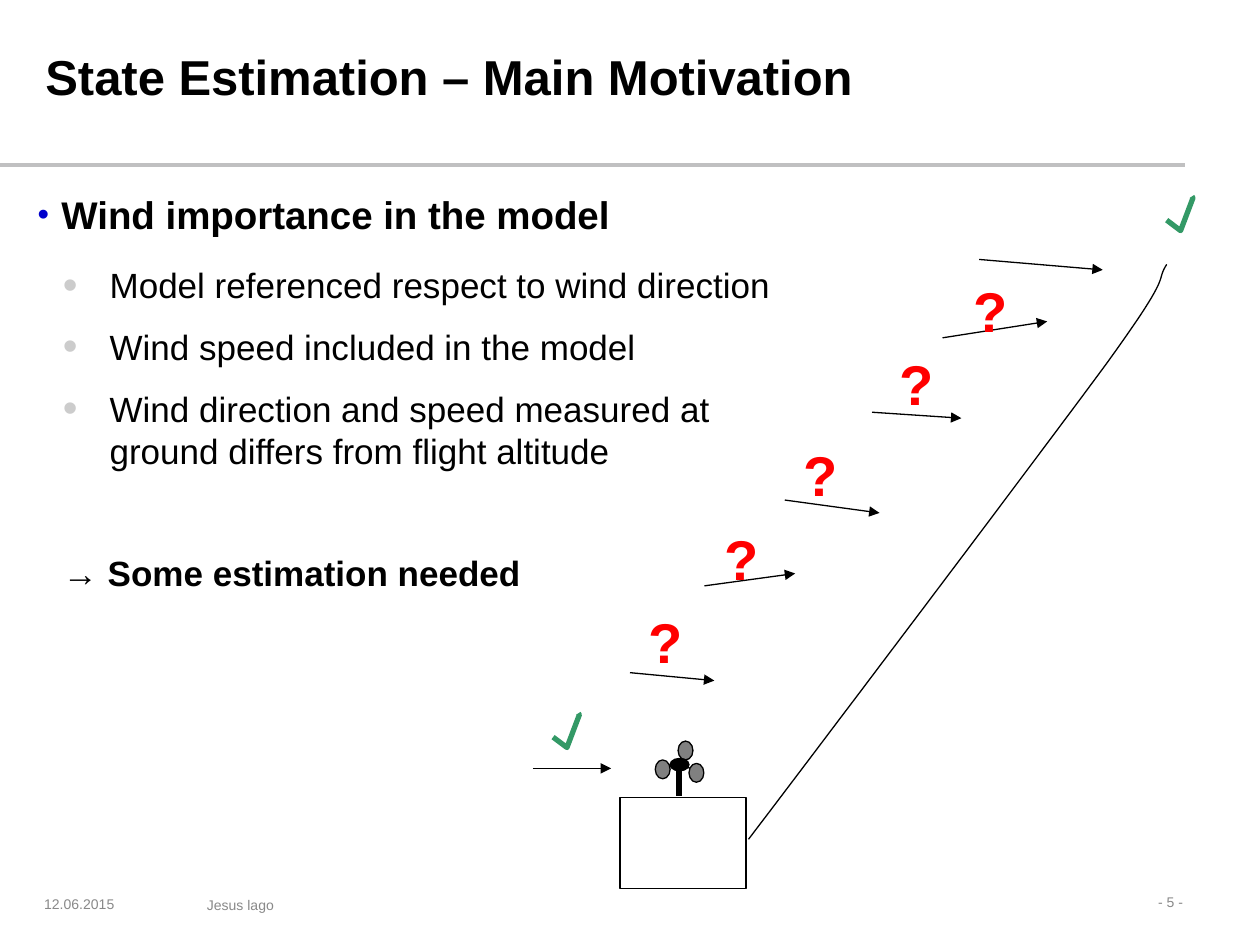
"""Build the slide on the motivation for estimating the wind state."""
from lxml.etree import SubElement
from pptx import Presentation
from pptx.dml.color import RGBColor
from pptx.enum.shapes import MSO_CONNECTOR, MSO_SHAPE
from pptx.enum.text import MSO_ANCHOR, MSO_AUTO_SIZE, PP_ALIGN
from pptx.oxml.ns import qn
from pptx.util import Cm, Pt


def outline(shape, color="000000", width=0.75):
    shape.line.color.rgb = RGBColor.from_string(color)
    shape.line.width = Pt(width)
    SubElement(shape._element.spPr, qn("a:effectLst"))


def format_text(paragraph, size, color="000000", bold=False, align=PP_ALIGN.LEFT):
    paragraph.alignment = align
    for run in paragraph.runs:
        run.font.name = "Arial"
        run.font.size = Pt(size)
        run.font.bold = bold
        run.font.color.rgb = RGBColor.from_string(color)


presentation = Presentation()
presentation.slide_width, presentation.slide_height = Cm(25.4), Cm(19.05)
slide = presentation.slides.add_slide(presentation.slide_layouts[5])
shapes = slide.shapes

title = shapes.title
title.left, title.top, title.width, title.height = Cm(0.66), Cm(0.15), Cm(20.09), Cm(2.9)
heading = title.text_frame
heading.text = "State Estimation – Main Motivation"
heading.vertical_anchor = MSO_ANCHOR.MIDDLE
heading.margin_top = heading.margin_bottom = 0
heading.paragraphs[0].line_spacing = 0.9
format_text(heading.paragraphs[0], 28, bold=True)

footers = [
    ("12.06.2015", 0.89, 17.63, 2.41, 1.17, 0, MSO_ANCHOR.MIDDLE, PP_ALIGN.LEFT),
    ("Jesus lago", 4.17, 17.91, 16.13, 0.66, 0, MSO_ANCHOR.MIDDLE, PP_ALIGN.LEFT),
    ("- 5 -", 20.7, 17.88, 3.4, 0.61, 0.25, MSO_ANCHOR.TOP, PP_ALIGN.RIGHT),
]
for wording, left, top, width, height, side, anchor, align in footers:
    footer = shapes.add_textbox(Cm(left), Cm(top), Cm(width), Cm(height)).text_frame
    footer.text = wording
    footer.word_wrap = True
    footer.vertical_anchor = anchor
    footer.margin_left = footer.margin_right = Cm(side)
    footer.margin_top = footer.margin_bottom = Cm(side / 2)
    format_text(footer.paragraphs[0], 8, "898989", align=align)

rules_and_struts = [
    (0, 3.33, 23.88, 3.33, "C0C0C1", 2.25),
    (13.69, 15.34, 13.69, 16.05, "000000", 3),
    (13.72, 15.39, 13.97, 15.52, "000000", 0.75),
    (13.82, 15.14, 13.64, 15.42, "000000", 0.75),
    (13.36, 15.47, 13.72, 15.42, "000000", 0.75),
]
for x1, y1, x2, y2, color, width in rules_and_struts:
    strut = shapes.add_connector(MSO_CONNECTOR.STRAIGHT, Cm(x1), Cm(y1), Cm(x2), Cm(y2))
    outline(strut, color, width)

anemometer_parts = [
    (MSO_SHAPE.OVAL, 13.89, 15.39, 0.3, 0.38, "808080"),
    (MSO_SHAPE.OVAL, 13.67, 14.94, 0.3, 0.38, "808080"),
    (MSO_SHAPE.OVAL, 13.21, 15.32, 0.3, 0.38, "808080"),
    (MSO_SHAPE.OVAL, 13.51, 15.29, 0.38, 0.25, "000000"),
    (MSO_SHAPE.RECTANGLE, 12.5, 16.08, 2.54, 1.83, None),
]
for kind, left, top, width, height, color in anemometer_parts:
    part = shapes.add_shape(kind, Cm(left), Cm(top), Cm(width), Cm(height))
    if color:
        part.fill.solid()
        part.fill.fore_color.rgb = RGBColor.from_string(color)
    else:
        part.fill.background()
    outline(part)

winds = [
    (19.74, 5.23, 22.23, 5.44),
    (19, 6.81, 21.11, 6.48),
    (17.58, 8.31, 19.38, 8.43),
    (15.82, 10.08, 17.73, 10.34),
    (14.2, 11.81, 16.03, 11.56),
    (12.7, 13.56, 14.4, 13.72),
    (10.74, 15.49, 12.32, 15.49),
]
for x1, y1, x2, y2 in winds:
    wind = shapes.add_connector(MSO_CONNECTOR.STRAIGHT, Cm(x1), Cm(y1), Cm(x2), Cm(y2))
    outline(wind)
    SubElement(wind.line._get_or_add_ln(), qn("a:tailEnd"), type="triangle")

tether_bends = [
    [(15.09, 16.92), (16.31, 15.32), (20.88, 9.27), (22.3, 7.34)],
    [(22.3, 7.34), (23.7, 5.41), (23.27, 5.74), (23.52, 5.33)],
]
tether = [tether_bends[0][0]]
for bend in tether_bends:
    for step in range(1, 21):
        t = step / 20
        weights = [(1 - t) ** 3, 3 * t * (1 - t) ** 2, 3 * t**2 * (1 - t), t**3]
        tether.append(tuple(sum(w * point[axis] for w, point in zip(weights, bend)) for axis in (0, 1)))

tick = [(0, 0.48), (0.28, 0.69), (0.53, 0.03), (0.51, 0)]
ticks = [[(left + x, top + y) for x, y in tick] for left, top in [(11.15, 14.38), (23.52, 3.96)]]
for route, color, width in [(tether, "000000", 0.75)] + [(mark, "339966", 3) for mark in ticks]:
    corners = [(Cm(x), Cm(y)) for x, y in route]
    builder = shapes.build_freeform(*corners[0])
    builder.add_line_segments(corners[1:], close=False)
    stroke = builder.convert_to_shape()
    stroke.fill.background()
    outline(stroke, color, width)

for left, top in [(19.38, 5.44), (17.88, 6.93), (15.95, 8.76), (14.35, 10.44), (12.83, 12.12)]:
    doubt = shapes.add_textbox(Cm(left), Cm(top), Cm(1.07), Cm(1.6)).text_frame
    doubt.text = "?"
    doubt.word_wrap = False
    doubt.auto_size = MSO_AUTO_SIZE.SHAPE_TO_FIT_TEXT
    format_text(doubt.paragraphs[0], 32, "FF0000", True, PP_ALIGN.CENTER)

dot = ("CCCCCC", 120)
points = [
    ("Wind importance in the model", 0, 22, True, 0.48, -0.48, 0, ("0000CC", 85)),
    ("Model referenced respect to wind direction", 1, 20, False, 1.45, -0.94, 15, dot),
    ("Wind speed included in the model", 1, 20, False, 1.45, -0.94, 11.3, dot),
    ("Wind direction and speed measured at ground differs from flight altitude",
     1, 20, False, 1.45, -0.94, 11.3, dot),
    ("→ Some estimation needed", 1, 20, True, 0.51, 0, 45.6, None),
]
argument = shapes.add_textbox(Cm(0.51), Cm(3.73), Cm(15.7), Cm(13.79)).text_frame
argument.word_wrap = True
argument.text = "\n".join(point[0] for point in points)
for paragraph, (_, level, size, bold, margin, indent, before, bullet) in zip(argument.paragraphs, points):
    paragraph.level = level
    paragraph.space_before = Pt(before)
    properties = paragraph._p.get_or_add_pPr()
    properties.set("marL", str(Cm(margin)))
    properties.set("indent", str(Cm(indent)))
    if bullet:
        color, percent = bullet
        SubElement(SubElement(properties, qn("a:buClr")), qn("a:srgbClr"), val=color)
        SubElement(properties, qn("a:buSzPct"), val=str(percent * 1000))
        SubElement(properties, qn("a:buFont"), typeface="Arial")
        SubElement(properties, qn("a:buChar"), char="•")
    format_text(paragraph, size, bold=bold)

presentation.save("out.pptx")
